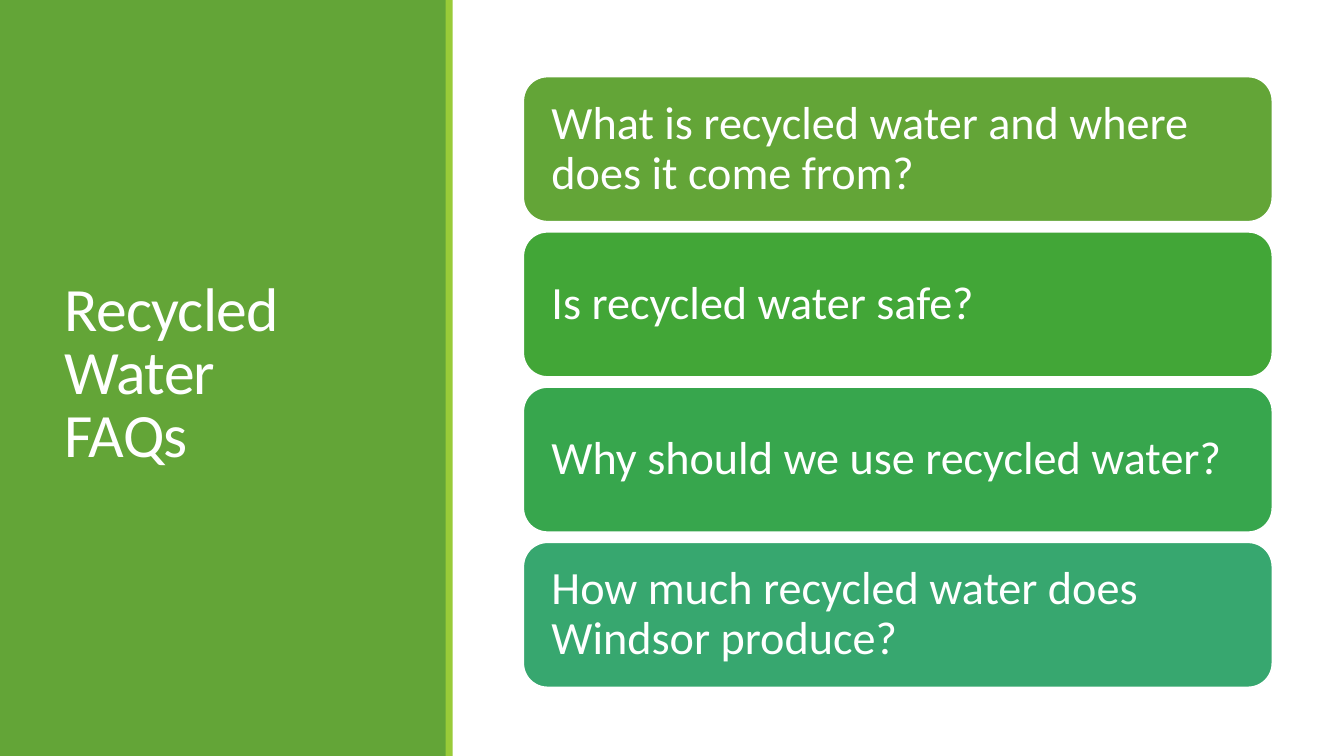
from pptx import Presentation
from pptx.dml.color import RGBColor
from pptx.enum.shapes import MSO_SHAPE
from pptx.enum.text import MSO_ANCHOR, PP_ALIGN
from pptx.util import Inches, Pt

GREEN, LIME, WHITE = "63A537", "99CB38", "FFFFFF"


def paint(color_format, color):
    color_format.rgb = RGBColor.from_string(color)


def write(shape, text, size=33, line_spacing=0.9, inset=0.21, tracking=0):
    frame = shape.text_frame
    frame.word_wrap = True
    frame.vertical_anchor = MSO_ANCHOR.MIDDLE
    frame.margin_left = frame.margin_right = Inches(inset)
    frame.text = text
    paragraph = frame.paragraphs[0]
    paragraph.alignment = PP_ALIGN.LEFT
    paragraph.line_spacing = line_spacing
    for run in paragraph.runs:
        run.font.name = "Calibri"
        run.font.size = Pt(size)
        paint(run.font.color, WHITE)
        run.font._element.set("spc", str(tracking))


prs = Presentation()
prs.slide_width, prs.slide_height = Inches(13.33), Inches(7.5)
slide = prs.slides.add_slide(prs.slide_layouts[5])

# Side panel with its lime edge
for left, width, color in [(0, 4.43, GREEN), (4.42, 0.07, LIME)]:
    band = slide.shapes.add_shape(
        MSO_SHAPE.RECTANGLE, Inches(left), 0, Inches(width), prs.slide_height)
    band.shadow.inherit = False
    band.fill.solid()
    paint(band.fill.fore_color, color)
    band.line.fill.background()

# Title, brought in front of the panel
title = slide.shapes.title
title.left, title.top = Inches(0.54), Inches(0.57)
title.width, title.height = Inches(3.37), Inches(6.31)
write(title, "Recycled Water \vFAQs", size=44, line_spacing=0.85,
      inset=0.1, tracking=-50)
title.element.getparent().append(title.element)

# Question cards
questions = [
    ("What is recycled water and where does it come from?", GREEN),
    ("Is recycled water safe?", "42A637"),
    ("Why should we use recycled water?", "37A64D"),
    ("How much recycled water does Windsor produce?", "37A76F"),
]
for row, (question, color) in enumerate(questions):
    card = slide.shapes.add_shape(
        MSO_SHAPE.ROUNDED_RECTANGLE, Inches(5.19), Inches(0.76 + row * 1.54),
        Inches(7.43), Inches(1.44))
    card.shadow.inherit = False
    card.fill.solid()
    paint(card.fill.fore_color, color)
    paint(card.line.color, WHITE)
    card.line.width = Pt(1.25)
    write(card, question)

prs.save("out.pptx")
